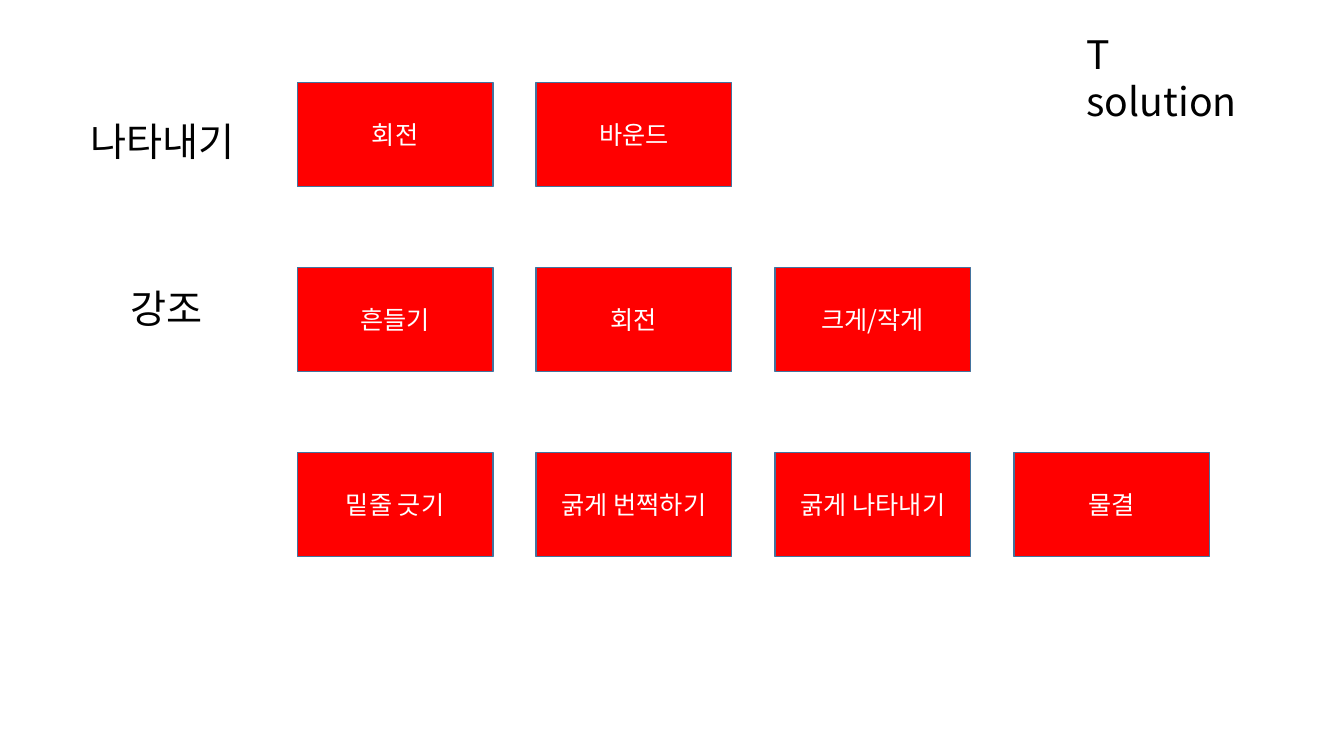
"""Build a slide that lists animation effects by group."""
from dataclasses import dataclass

from lxml.etree import SubElement
from pptx import Presentation
from pptx.dml.color import RGBColor
from pptx.enum.shapes import MSO_SHAPE as Preset
from pptx.enum.text import MSO_ANCHOR as Anchor, MSO_AUTO_SIZE as AutoSize, PP_ALIGN as Align
from pptx.oxml.ns import qn
from pptx.util import Pt


@dataclass(frozen=True)
class Theme:
    """Colours, font and type sizes of the slide."""
    font: str = "Noto Sans CJK KR"
    box: RGBColor = RGBColor(0xFF, 0x00, 0x00)
    outline: RGBColor = RGBColor(0x43, 0x73, 0x9E)
    light: RGBColor = RGBColor(0xFF, 0xFF, 0xFF)
    dark: RGBColor = RGBColor(0x00, 0x00, 0x00)
    heading_size: int = 28
    effect_size: int = 18


THEME = Theme()
GRID_LEFT, GRID_TOP = 212.4, 59
COLUMN_STEP, ROW_STEP = 170.6, 132.1
BOX_WIDTH, BOX_HEIGHT = 139.7, 74.3
LABEL_WIDTH, LABEL_HEIGHT = 136, 41
EFFECT_ROWS = [
    ["회전", "바운드"],
    ["흔들기", "회전", "크게/작게"],
    ["밑줄 긋기", "굵게 번쩍하기", "굵게 나타내기", "물결"],
]
GROUP_LABELS = [("나타내기", 57.6, 80), ("강조", 86.4, 199.4)]


def write(frame, text, size=THEME.heading_size, color=THEME.dark, align=Align.LEFT, anchor=Anchor.TOP):
    """Put formatted text into a text frame."""
    frame.word_wrap = True
    frame.auto_size = AutoSize.NONE
    frame.vertical_anchor = anchor
    paragraph = frame.paragraphs[0]
    paragraph.alignment = align
    run = paragraph.add_run()
    run.text = text
    run.font.size = Pt(size)
    run.font.color.rgb = color
    run.font.name = THEME.font
    SubElement(run.font._element, qn("a:ea"), typeface=THEME.font)


def add_heading(slide, text, left, top, width, height):
    """Move the title placeholder and fill it."""
    heading = slide.shapes.title
    heading.left, heading.top = Pt(left), Pt(top)
    heading.width, heading.height = Pt(width), Pt(height)
    write(heading.text_frame, text)


def add_group_label(slide, text, left, top):
    """Add the name of an effect group."""
    label = slide.shapes.add_textbox(Pt(left), Pt(top), Pt(LABEL_WIDTH), Pt(LABEL_HEIGHT))
    write(label.text_frame, text)


def add_effect(slide, text, row, column):
    """Add an effect box at a grid position."""
    effect = slide.shapes.add_shape(
        Preset.RECTANGLE,
        Pt(GRID_LEFT + column * COLUMN_STEP), Pt(GRID_TOP + row * ROW_STEP),
        Pt(BOX_WIDTH), Pt(BOX_HEIGHT))
    effect.shadow.inherit = False
    effect.fill.solid()
    effect.fill.fore_color.rgb = THEME.box
    effect.line.color.rgb = THEME.outline
    effect.line.width = Pt(1)
    write(effect.text_frame, text, size=THEME.effect_size, color=THEME.light,
          align=Align.CENTER, anchor=Anchor.MIDDLE)


def main():
    """Build and save the slide."""
    deck = Presentation()
    deck.slide_width, deck.slide_height = Pt(960), Pt(540)
    slide = deck.slides.add_slide(deck.slide_layouts[5])
    add_heading(slide, "T solution", 769, 18, LABEL_WIDTH, 75)
    for text, left, top in GROUP_LABELS:
        add_group_label(slide, text, left, top)
    for row, effects in enumerate(EFFECT_ROWS):
        for column, text in enumerate(effects):
            add_effect(slide, text, row, column)
    deck.save("out.pptx")


if __name__ == "__main__":
    main()
